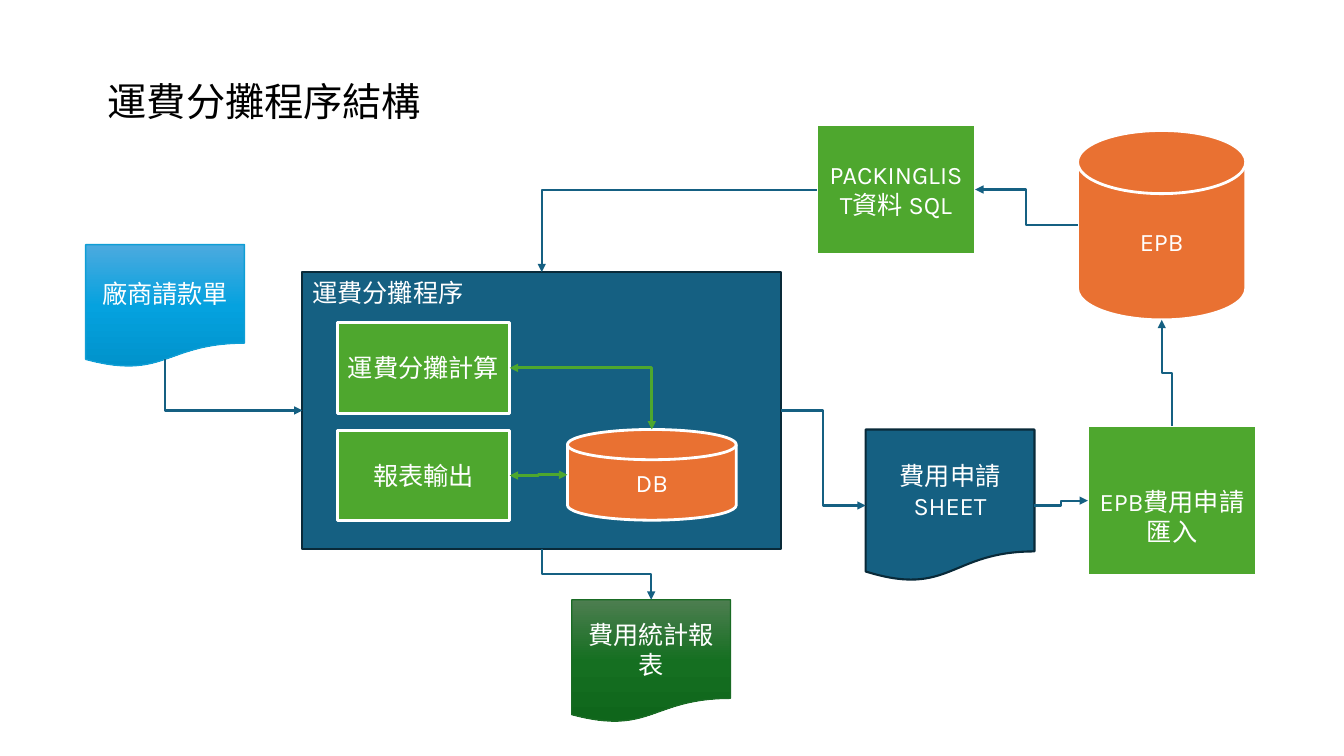
"""Build the freight allocation structure slide."""
from copy import deepcopy

from lxml import etree
from pptx import Presentation
from pptx.dml.color import RGBColor
from pptx.enum import shapes, text
from pptx.oxml.ns import qn
from pptx.util import Pt

WHITE = RGBColor(0xFF, 0xFF, 0xFF)
BLACK = RGBColor(0x00, 0x00, 0x00)
BLUE = RGBColor(0x15, 0x60, 0x82)
NAVY = RGBColor(0x09, 0x2A, 0x39)
ORANGE = RGBColor(0xE9, 0x71, 0x32)
GREEN = RGBColor(0x4E, 0xA7, 0x2E)
SKY = RGBColor(0x0F, 0x9E, 0xD5)
FOREST = RGBColor(0x19, 0x6B, 0x24)
SKY_BLEND = [RGBColor(0x4C, 0xAA, 0xDF), RGBColor(0x05, 0xA2, 0xDF), RGBColor(0x00, 0x92, 0xCB)]
FOREST_BLEND = [RGBColor(0x4D, 0x7E, 0x50), RGBColor(0x15, 0x6F, 0x21), RGBColor(0x0F, 0x66, 0x1B)]

FONT = "Karla"
TITLE = "運費分攤程序結構"
TITLE_BOX = (69.8, 51.8, 240.5, 41.2)

RECTANGLE = shapes.MSO_SHAPE.RECTANGLE
DISK = shapes.MSO_SHAPE.FLOWCHART_MAGNETIC_DISK
DOCUMENT = shapes.MSO_SHAPE.FLOWCHART_DOCUMENT
DOCUMENT_BASE = 0.934

STYLES = {
    "program": (RECTANGLE, BLUE, NAVY, 1.5),
    "database": (DISK, ORANGE, WHITE, 2),
    "step": (RECTANGLE, GREEN, WHITE, 2),
    "form": (DOCUMENT, BLUE, NAVY, 1.5),
    "invoice": (DOCUMENT, SKY_BLEND, SKY, 1),
    "report": (DOCUMENT, FOREST_BLEND, FOREST, 1),
}
TOP_LEFT = {"align": text.PP_ALIGN.LEFT, "anchor": text.MSO_ANCHOR.TOP}

BOXES = {
    "program": ("運費分攤程序", "program", (216, 194.4, 342, 197.6), TOP_LEFT),
    "db": ("DB", "database", (405.3, 306.8, 120.6, 64.8), {}),
    "epb": ("EPB", "database", (769.7, 93.2, 120.2, 135.3), {}),
    "calculation": ("運費分攤計算", "step", (241, 230.4, 123, 64.8), {}),
    "output": ("報表輸出", "step", (241, 307.3, 123, 64.8), {}),
    "request": ("費用申請\nSHEET", "form", (618.3, 306.8, 120.6, 108.6), {}),
    "import": ("EPB費用申請匯入", "step", (777.1, 304.2, 120.2, 106.9), {"margin_top": 26}),
    "packing": ("PACKINGLIST資料 SQL", "step", (583.4, 89.3, 113.2, 92.2), {}),
    "invoice": ("廠商請款單", "invoice", (61.2, 174.7, 113.4, 87.8), {}),
    "report": ("費用統計報表", "report", (408.4, 428.4, 113.4, 87.8), {}),
}

LINKS = [
    ("epb", "left", "packing", "right"),
    ("packing", "left", "program", "top"),
    ("program", "right", "request", "left"),
    ("request", "right", "import", "left"),
    ("import", "top", "epb", "bottom"),
    ("invoice", "bottom", "program", "left"),
    ("program", "bottom", "report", "top"),
]
TWO_WAY_LINKS = [
    ("calculation", "right", "db", "top"),
    ("output", "right", "db", "left"),
]
SIDES = ["top", "left", "bottom", "right"]


def write(shape, words, size=18, color=WHITE, align=text.PP_ALIGN.CENTER,
          anchor=text.MSO_ANCHOR.MIDDLE, wrap=True, margin_top=3.6):
    """Put formatted text into a shape."""
    frame = shape.text_frame
    frame.text = words
    frame.word_wrap = wrap
    frame.vertical_anchor = anchor
    frame.margin_top = Pt(margin_top)
    for paragraph in frame.paragraphs:
        paragraph.alignment = align
        for run in paragraph.runs:
            run.font.name = FONT
            run.font.size = Pt(size)
            run.font.color.rgb = color


def paint(shape, fill):
    """Fill a shape with one colour or a three-step vertical blend."""
    if isinstance(fill, RGBColor):
        shape.fill.solid()
        shape.fill.fore_color.rgb = fill
        return
    shape.fill.gradient()
    shape.fill.gradient_angle = 270
    stops = shape._element.spPr.find(".//" + qn("a:gsLst"))
    stops.insert(1, deepcopy(stops[0]))
    for index, (stop, color) in enumerate(zip(shape.fill.gradient_stops, fill)):
        stop.position = index / 2
        stop.color.rgb = color


def add_box(slide, words, style, box, layout):
    """Add one labelled node."""
    kind, fill, line_color, line_width = STYLES[style]
    shape = slide.shapes.add_shape(kind, *map(Pt, box))
    shape.shadow.inherit = False
    paint(shape, fill)
    shape.line.color.rgb = line_color
    shape.line.width = Pt(line_width)
    write(shape, words, **layout)
    return shape


def site(shape, side):
    """Return the connection index and point on a side of a node."""
    index = SIDES.index(side)
    if shape.auto_shape_type == DISK:
        index += 1
    base = DOCUMENT_BASE if shape.auto_shape_type == DOCUMENT else 1
    across, down = {"top": (0.5, 0), "left": (0, 0.5), "bottom": (0.5, base), "right": (1, 0.5)}[side]
    return index, int(shape.left + across * shape.width), int(shape.top + down * shape.height)


def connect(slide, start, start_side, end, end_side, color, width, ends):
    """Join two nodes with an elbow arrow."""
    start_index, x1, y1 = site(start, start_side)
    end_index, x2, y2 = site(end, end_side)
    connector = slide.shapes.add_connector(shapes.MSO_CONNECTOR.ELBOW, x1, y1, x2, y2)
    connector.begin_connect(start, min(start_index, 3))
    connector.end_connect(end, min(end_index, 3))
    upright = start_side in ("top", "bottom")
    across, down = abs(x2 - x1), abs(y2 - y1)
    connector.width, connector.height = (down, across) if upright else (across, down)
    connector.left = (x1 + x2 - connector.width) // 2
    connector.top = (y1 + y2 - connector.height) // 2
    properties = connector._element.spPr
    frame = properties.find(qn("a:xfrm"))
    frame.set("rot", "16200000" if upright else "0")
    frame.set("flipH", str(int(y2 > y1 if upright else x2 < x1)))
    frame.set("flipV", str(int(x2 < x1 if upright else y2 < y1)))
    if upright != (end_side in ("top", "bottom")):
        properties.find(qn("a:prstGeom")).set("prst", "bentConnector2")
    connector.line.color.rgb = color
    connector.line.width = Pt(width)
    line = properties.find(qn("a:ln"))
    for end_name in ends:
        etree.SubElement(line, qn("a:" + end_name), type="triangle")
    etree.SubElement(properties, qn("a:effectLst"))


def main():
    """Compose and save the slide."""
    presentation = Presentation()
    presentation.slide_width, presentation.slide_height = Pt(960), Pt(540)
    slide = presentation.slides.add_slide(presentation.slide_layouts[5])
    title = slide.shapes.title
    title.left, title.top, title.width, title.height = map(Pt, TITLE_BOX)
    write(title, TITLE, size=28, color=BLACK, wrap=False, **TOP_LEFT)
    nodes = {name: add_box(slide, *box) for name, box in BOXES.items()}
    for links, color, width, ends in (
        (LINKS, BLUE, 1.5, ["tailEnd"]),
        (TWO_WAY_LINKS, GREEN, 2, ["headEnd", "tailEnd"]),
    ):
        for start, start_side, end, end_side in links:
            connect(slide, nodes[start], start_side, nodes[end], end_side, color, width, ends)
    presentation.save("out.pptx")


if __name__ == "__main__":
    main()
